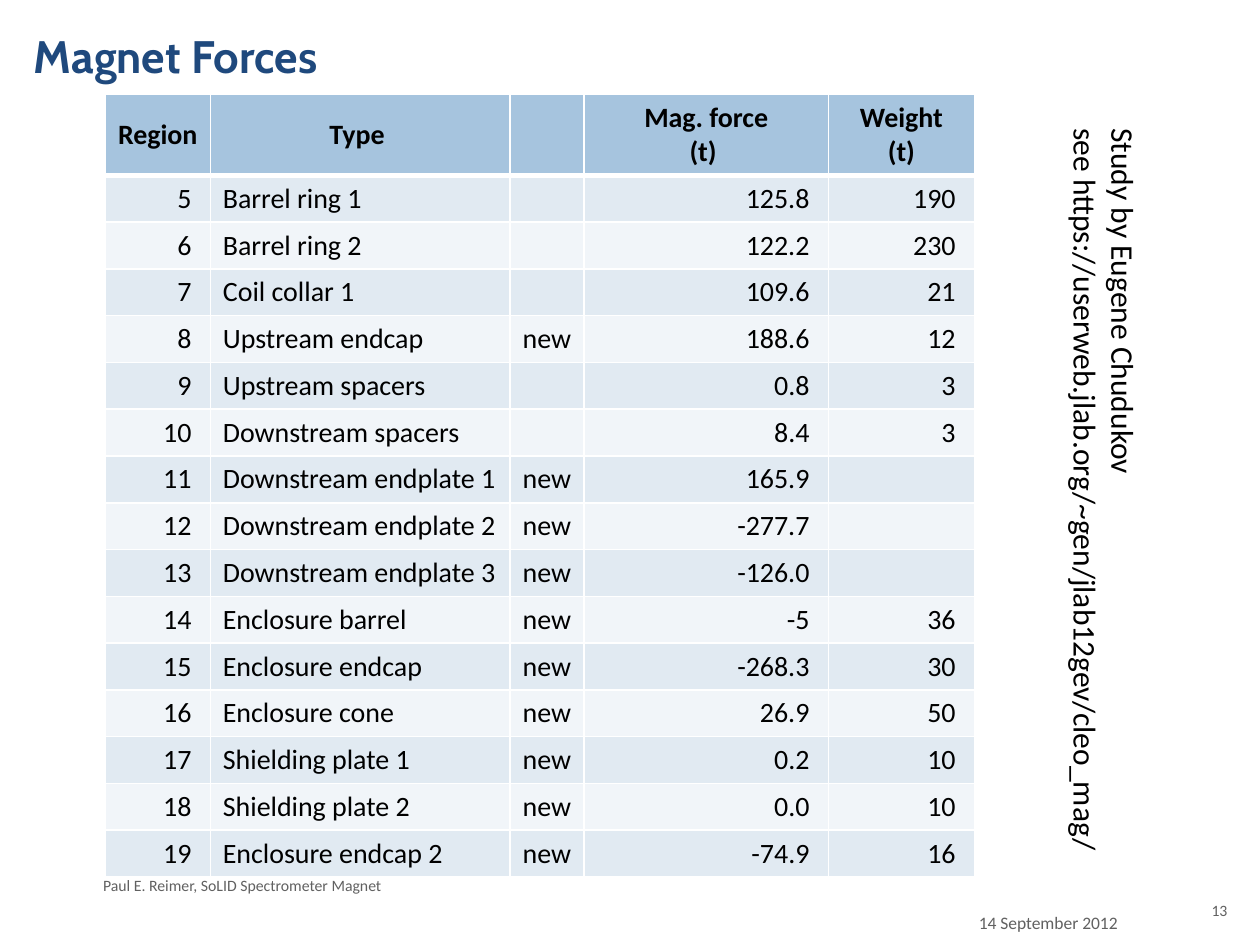
from lxml.etree import SubElement
from pptx import Presentation
from pptx.dml.color import RGBColor
from pptx.enum.text import MSO_ANCHOR as Anchor, MSO_AUTO_SIZE as AutoSize, PP_ALIGN as Align
from pptx.oxml.ns import qn
from pptx.util import Pt

COLORS = {
    "title": "1F497D", "text": "000000", "footer": "616161", "border": "FFFFFF",
    "header": "A6C4DE", "odd": "E1EAF2", "even": "F1F5F9",
}


def write(frame, text, size=16, color="text", font="Calibri", bold=False, align=Align.LEFT):
    """Fill a text frame, one paragraph for each line of text."""
    for index, line in enumerate(text.split("\n")):
        para = frame.add_paragraph() if index else frame.paragraphs[0]
        para.alignment = align
        if line:
            span = para.add_run()
            span.text = line
            span.font.name = font
            span.font.size = Pt(size)
            span.font.bold = bold
            span.font.color.rgb = RGBColor.from_string(COLORS[color])
        else:
            # An empty cell needs its own size, or it stretches the row
            SubElement(para._p, qn("a:endParaRPr"), sz=str(size * 100))


def set_borders(cell, **widths):
    """Draw the cell's borders; widths are in points, by side L, R, T, B."""
    properties = cell._tc.get_or_add_tcPr()
    for side, width in widths.items():
        line = SubElement(properties, qn(f"a:ln{side}"), w=str(Pt(width)))
        fill = SubElement(line, qn("a:solidFill"))
        SubElement(fill, qn("a:srgbClr"), val=COLORS["border"])


deck = Presentation()
deck.slide_width, deck.slide_height = Pt(720), Pt(540)
page = deck.slides.add_slide(deck.slide_layouts[6])

# Title
title = page.shapes.add_textbox(Pt(12.24), Pt(12.24), Pt(648), Pt(56))
title.text_frame.word_wrap = True
write(title.text_frame, "Magnet Forces", size=26, color="title", font="Cabin", bold=True)

# Table of forces
HEADINGS = ("Region ", "Type ", "", "Mag. force\n(t) ", "Weight\n(t)")
REGIONS = [
    ("Barrel ring 1", "", "125.8", "190"),
    ("Barrel ring 2", "", "122.2", "230"),
    ("Coil collar 1", "", "109.6", "21"),
    ("Upstream endcap", "new", "188.6", "12"),
    ("Upstream spacers", "", "0.8", "3"),
    ("Downstream spacers", "", "8.4", "3"),
    ("Downstream endplate 1", "new", "165.9", ""),
    ("Downstream endplate 2", "new", "-277.7", ""),
    ("Downstream endplate 3", "new", "-126.0", ""),
    ("Enclosure barrel", "new", "-5", "36"),
    ("Enclosure endcap", "new", "-268.3", "30"),
    ("Enclosure cone", "new", "26.9", "50"),
    ("Shielding plate 1", "new", "0.2", "10"),
    ("Shielding plate 2", "new", "0.0", "10"),
    ("Enclosure endcap 2", "new", "-74.9", "16"),
]
FIRST_REGION = 5
NUMBER_COLUMNS = (0, 3, 4)
COLUMN_WIDTHS = (60.1, 171.3, 42.3, 139.6, 83.5)
HEADER_HEIGHT, ROW_HEIGHT = 46.2, 26.75

rows = [HEADINGS]
for region, values in enumerate(REGIONS, FIRST_REGION):
    rows.append((str(region), *values))

table_height = HEADER_HEIGHT + ROW_HEIGHT * len(REGIONS)
table = page.shapes.add_table(len(rows), len(HEADINGS), Pt(60.1), Pt(54),
                              Pt(sum(COLUMN_WIDTHS)), Pt(table_height)).table
for column, width in zip(table.columns, COLUMN_WIDTHS):
    column.width = Pt(width)

for row_index, row in enumerate(rows):
    is_header = row_index == 0
    table.rows[row_index].height = Pt(HEADER_HEIGHT if is_header else ROW_HEIGHT)
    fill = "header" if is_header else "odd" if row_index % 2 else "even"
    for column_index, text in enumerate(row):
        cell = table.cell(row_index, column_index)
        align = Align.LEFT
        if is_header:
            align = Align.CENTER
        elif column_index in NUMBER_COLUMNS and text:
            align = Align.RIGHT
            text += " "
        write(cell.text_frame, text, bold=is_header, align=align)
        cell.vertical_anchor = Anchor.MIDDLE
        set_borders(cell, L=1, R=1, T=3 if row_index == 1 else 1, B=3 if is_header else 1)
        cell.fill.solid()
        cell.fill.fore_color.rgb = RGBColor.from_string(COLORS[fill])

# Footer: date, author and page number
for text, left, top, width, height, size, align in (
    ("14 September 2012", 552.24, 517.68, 108, 16.56, 10, Align.LEFT),
    ("Paul E. Reimer, SoLID Spectrometer Magnet", 51.84, 496.8, 468, 18, 9, Align.LEFT),
    ("13", 678.24, 511.2, 30.24, 28.8, 9, Align.RIGHT),
):
    box = page.shapes.add_textbox(Pt(left), Pt(top), Pt(width), Pt(height))
    box.text_frame.word_wrap = True
    write(box.text_frame, text, size=size, color="footer", align=align)

# Source of the study, turned to read downwards
credit = page.shapes.add_textbox(Pt(415.44), Pt(256.32), Pt(431.28), Pt(51.12))
credit.rotation = 90
credit.text_frame.word_wrap = False
credit.text_frame.auto_size = AutoSize.SHAPE_TO_FIT_TEXT
write(credit.text_frame,
      "Study by Eugene Chudukov\nsee https://userweb.jlab.org/~gen/jlab12gev/cleo_mag/", size=18)

deck.save("out.pptx")
